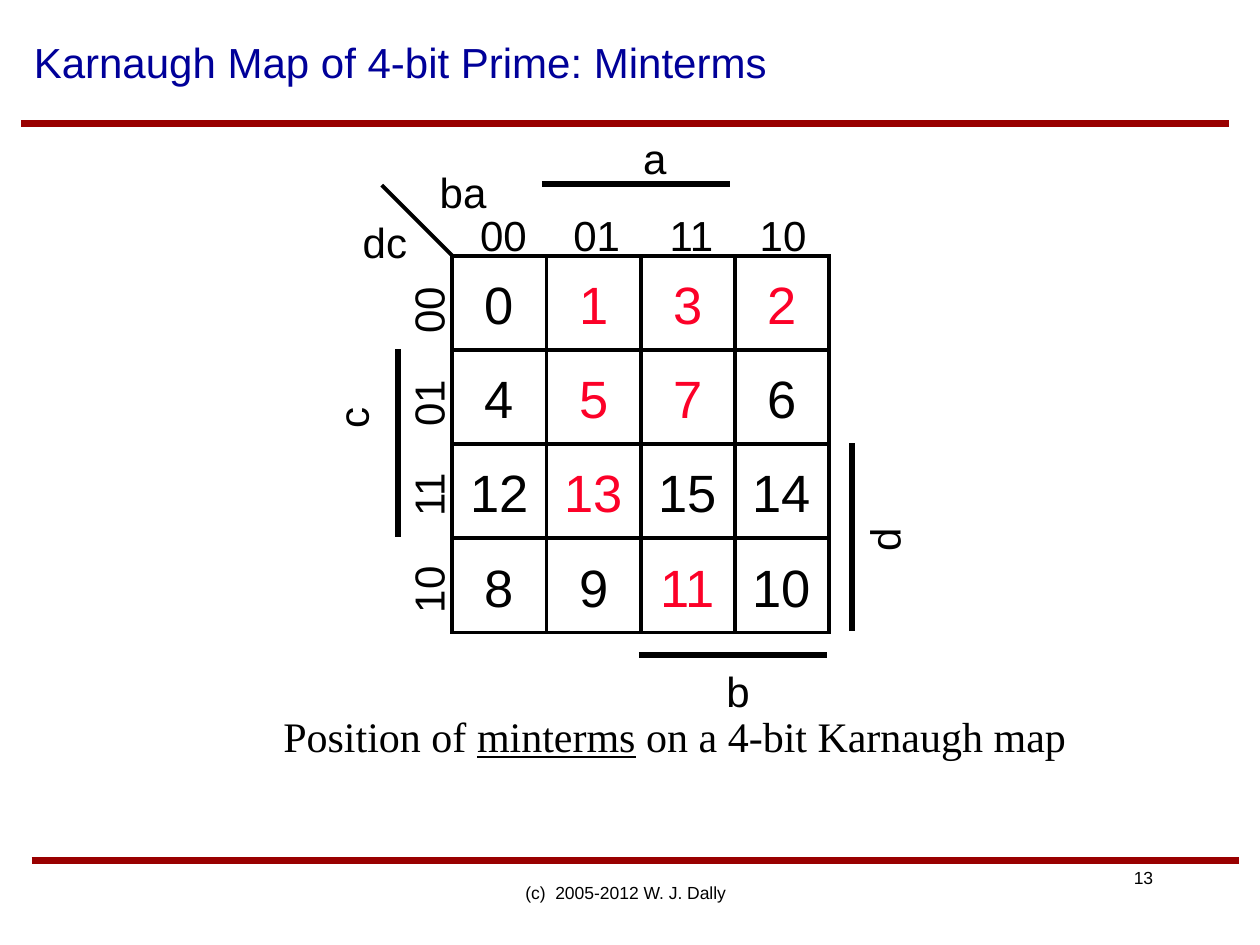
from dataclasses import dataclass

from lxml import etree
from pptx import Presentation
from pptx.dml.color import RGBColor
from pptx.enum.shapes import MSO_CONNECTOR, MSO_SHAPE
from pptx.enum.text import MSO_ANCHOR, MSO_AUTO_SIZE, PP_ALIGN
from pptx.oxml.ns import qn
from pptx.util import Inches, Pt

STRAIGHT = MSO_CONNECTOR.STRAIGHT
RECTANGLE = MSO_SHAPE.RECTANGLE
LEFT, CENTER, RIGHT = PP_ALIGN.LEFT, PP_ALIGN.CENTER, PP_ALIGN.RIGHT
TOP, MIDDLE = MSO_ANCHOR.TOP, MSO_ANCHOR.MIDDLE
GROW = MSO_AUTO_SIZE.SHAPE_TO_FIT_TEXT
FIXED = MSO_AUTO_SIZE.NONE


@dataclass(frozen=True)
class Theme:
    ink: str = "000000"
    prime: str = "FC0128"
    title: str = "000099"
    rule: str = "990000"
    sans: str = "Arial"
    serif: str = "Times New Roman"
    small: int = 10
    body: int = 24
    cell: int = 30
    thin: float = 2.25
    bar: float = 3.5
    thick: float = 4


class SlideBuilder:
    def __init__(self, page, theme):
        self.page = page
        self.theme = theme

    def line(self, start, end, width, color=None):
        connector = self.page.shapes.add_connector(
            STRAIGHT, *(Inches(value) for value in (*start, *end)))
        connector.line.color.rgb = RGBColor.from_string(color or self.theme.ink)
        connector.line.width = Pt(width)
        etree.SubElement(connector._element.spPr, qn("a:effectLst"))

    def square(self, left, top, side):
        box = self.page.shapes.add_shape(
            RECTANGLE, *(Inches(value) for value in (left, top, side, side)))
        box.shadow.inherit = False
        box.fill.background()
        box.line.color.rgb = RGBColor.from_string(self.theme.ink)
        box.line.width = Pt(self.theme.thin)
        outline = box._element.spPr.find(qn("a:ln"))
        etree.SubElement(outline, qn("a:miter"), lim="800000")

    def text(self, words, place, size, color=None, font=None, align=LEFT,
             anchor=TOP, fit=GROW, wrap=True, inset=True):
        box = self.page.shapes.add_textbox(*(Inches(value) for value in place))
        frame = box.text_frame
        frame.text = words
        frame.word_wrap = wrap
        frame.auto_size = fit
        frame.vertical_anchor = anchor
        if not inset:
            frame.margin_left = frame.margin_right = Inches(0)
            frame.margin_top = frame.margin_bottom = Inches(0)
        para = frame.paragraphs[0]
        para.alignment = align
        self.style(para.runs[0], size, color, font)
        return box

    def style(self, span, size, color=None, font=None):
        span.font.size = Pt(size)
        span.font.name = font or self.theme.sans
        span.font.color.rgb = RGBColor.from_string(color or self.theme.ink)

    def label(self, words, left, top, width=0.39, turned=False):
        box = self.text(words, (left, top, width, 0.4), self.theme.body,
                        align=RIGHT, inset=False)
        box.rotation = 270 if turned else 0

    def number(self, value, left, top, side, color):
        width = 0.25 * len(str(value))
        place = (left + (side - width) / 2, top + 0.13, width, 0.5)
        self.text(str(value), place, self.theme.cell, color,
                  align=CENTER, inset=False)

    def caption(self, parts, place):
        box = self.text(parts[0], place, self.theme.body,
                        font=self.theme.serif, wrap=False)
        para = box.text_frame.paragraphs[0]
        for index, words in enumerate(parts[1:], 1):
            span = para.add_run()
            span.text = words
            self.style(span, self.theme.body, font=self.theme.serif)
            span.font.underline = index % 2 == 1


def draw_map(builder):
    theme = builder.theme
    left, top, side, step = 3.59, 2.03, 2.99 / 4, 0.74
    gray = [0, 1, 3, 2]
    primes = {1, 2, 3, 5, 7, 11, 13}

    for row, high in enumerate(gray):
        for column, low in enumerate(gray):
            value = high * 4 + low
            x, y = left + column * side, top + row * side
            builder.square(x, y, side)
            builder.number(value, x, y, side,
                           theme.prime if value in primes else theme.ink)

    for index, code in enumerate(gray):
        bits = f"{code:02b}"
        builder.label(bits, 3.79 + index * step, 1.66)
        builder.label(bits, 3.2, 2.27 + index * step, turned=True)

    builder.line((left, top), (3.03, 1.47), theme.thin)
    builder.label("ba", 3.47, 1.32)
    builder.label("dc", 2.84, 1.72)

    bars = [((4.3, 1.46), (5.79, 1.46)), ((5.07, 5.2), (6.56, 5.2)),
            ((3.16, 4.26), (3.16, 2.77)), ((6.76, 5.01), (6.76, 3.52))]
    for start, end in bars:
        builder.line(start, end, theme.bar)
    builder.label("a", 4.9, 1.05)
    builder.label("b", 5.56, 5.28)
    builder.label("c", 2.7, 3.13, 0.19, turned=True)
    builder.label("d", 6.82, 4.19, turned=True)


def main():
    deck = Presentation()
    deck.slide_width, deck.slide_height = Inches(10), Inches(7.5)
    theme = Theme()
    builder = SlideBuilder(deck.slides.add_slide(deck.slide_layouts[6]), theme)

    builder.text("Karnaugh Map of 4-bit Prime: Minterms", (0.17, 0, 8.5, 0.98),
                 theme.body, theme.title, anchor=MIDDLE, fit=FIXED)
    for x, y in ((0.17, 0.98), (0.25, 6.83)):
        builder.line((x, y), (x + 9.58, y), theme.thick, theme.rule)

    draw_map(builder)
    builder.caption(["Position of ", "minterms", " on a 4-bit Karnaugh map"],
                    (2.15, 5.59, 6.41, 0.5))
    builder.text("(c)  2005-2012 W. J. Dally", (3.38, 6.83, 3.17, 0.5),
                 theme.small, align=CENTER, anchor=MIDDLE, fit=FIXED, wrap=False)
    builder.text("13", (7.5, 6.83, 1.75, 0.27), theme.small, align=RIGHT)
    deck.save("out.pptx")


if __name__ == "__main__":
    main()
